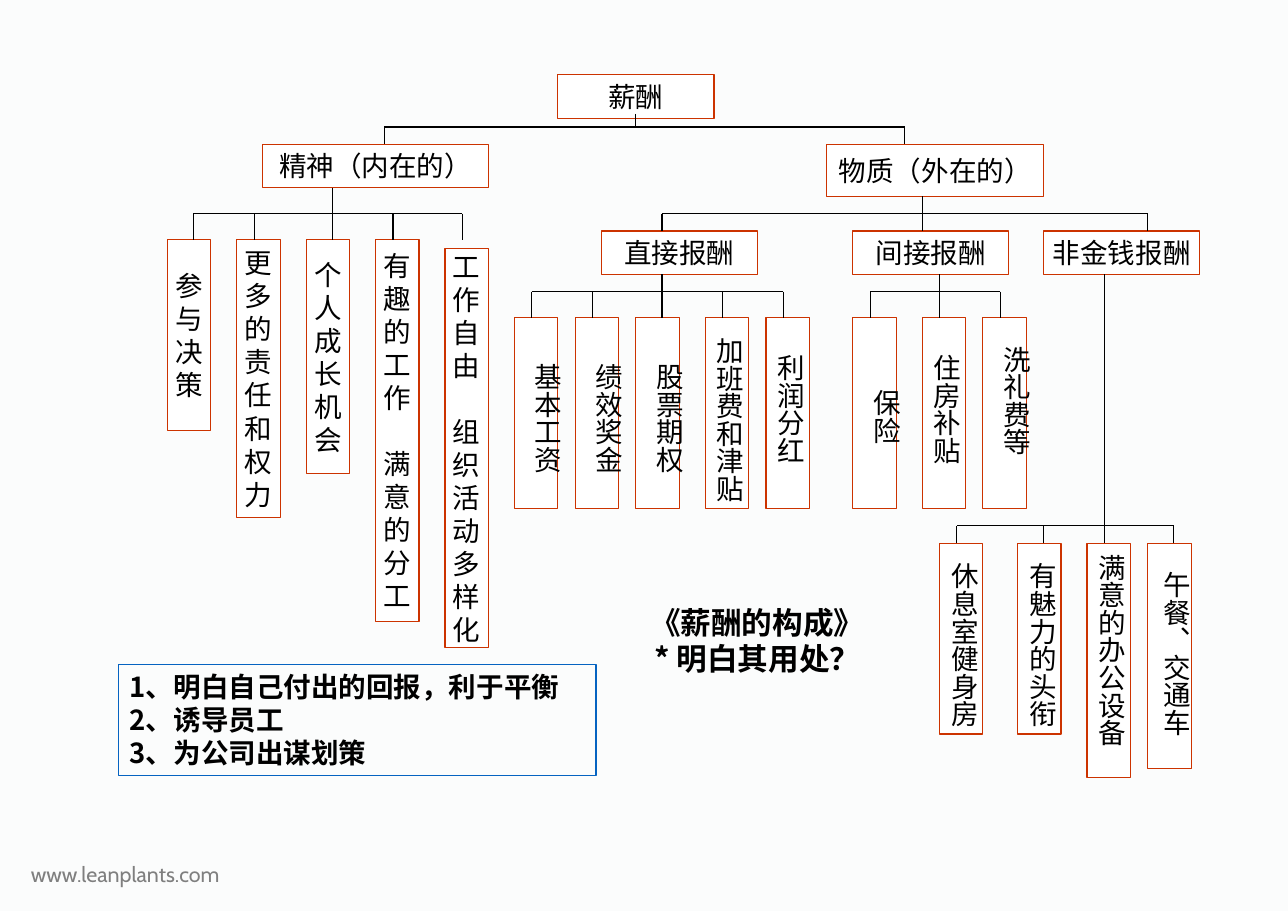
from pptx import Presentation
from pptx.dml.color import RGBColor
from pptx.enum.shapes import MSO_CONNECTOR, MSO_SHAPE
from pptx.enum.text import MSO_ANCHOR, MSO_AUTO_SIZE, PP_ALIGN
from pptx.oxml.ns import qn
from pptx.util import Inches, Mm, Pt
from lxml.etree import SubElement

# Content; places are (column, row) on a 2 mm grid
TITLE = ["《薪酬的构成》", "* 明白其用处？"]
USES = ["1、明白自己付出的回报，利于平衡", "2、诱导员工", "3、为公司出谋划策"]
SITE = "www.leanplants.com"

# Heading boxes: text, column, row, width, height
HEADINGS = [
    ("薪酬", 45, 0, 18, 5),
    ("精神（内在的）", 11, 8, 26, 5),
    ("物质（外在的）", 76, 8, 25, 6),
    ("间接报酬", 79, 18, 18, 5),
    ("直接报酬", 50, 18, 18, 5),
    ("非金钱报酬", 101, 18, 18, 5),
]

# Inner rewards, side by side: text parts, row, height
INNER_REWARDS = [
    (["参与决策"], 19, 22),
    (["更多的责任和权力"], 19, 32),
    (["个人成长机会"], 19, 27),
    (["有趣的工作", "满意的分工"], 19, 44),
    (["工作自由", "组织活动多样化"], 20, 46),
]

# Outer rewards: box column, row, height; label text, column, row
OUTER_REWARDS = [
    (40, 28, 22, "基本工资", 40, 32),
    (47, 28, 22, "绩效奖金", 47, 32),
    (54, 28, 22, "股票期权", 54, 32),
    (62, 28, 22, "加班费和津贴", 61, 29),
    (69, 28, 22, "利润分红", 68, 31),
    (79, 28, 22, "保险", 79, 35),
    (87, 28, 22, "住房补贴", 86, 31),
    (94, 28, 22, "洗礼费等", 94, 30),
    (89, 54, 22, "休息室健身房", 88, 55),
    (98, 54, 22, "有魅力的头衔", 97, 55),
    (106, 54, 27, "满意的办公设备", 105, 54),
    (113, 54, 26, "午餐、交通车", 112.5, 56),
]

# Branches: trunk column, trunk top, trunk bottom, bar row, drop columns, drop bottom
BRANCHES = [
    (54, 4.5, 6, 6, [25, 85], 8),
    (19, 13, 19, 16, [3, 10, 26, 34], 19),
    (87, 14, 18, 16, [57, 113], 18),
    (57, 23, 28, 25, [42, 49, 64, 71], 28),
    (89, 23, 28, 25, [81, 96], 28),
    (108, 23, 54, 52, [91, 101, 116], 54),
]

BACKGROUND = RGBColor(0xFB, 0xFC, 0xFC)
WHITE = RGBColor(0xFF, 0xFF, 0xFF)
BLACK = RGBColor(0, 0, 0)
GREY = RGBColor(0x7F, 0x7F, 0x7F)
RED = RGBColor(0xCC, 0x33, 0x00)
BLUE = RGBColor(0x05, 0x63, 0xC1)
CHINESE_FONT = "Noto Sans CJK SC"
LEAF_WIDTH, INNER_STEP = 5, 8
LINE_WIDTH = Pt(0.75)
LINE_HEIGHT = 1.2

prs = Presentation()
prs.slide_width, prs.slide_height = Inches(11.69), Inches(8.27)
slide = prs.slides.add_slide(prs.slide_layouts[5])
slide.background.fill.solid()
slide.background.fill.fore_color.rgb = BACKGROUND


def x_at(column):
    return Inches(1.52) + Mm(2 * column)


def y_at(row):
    return Inches(0.68) + Mm(2 * row)


def area(column, row, width, height):
    return x_at(column), y_at(row), Mm(2 * width), Mm(2 * height)


def write(shape, lines, size=18, align=PP_ALIGN.CENTER, anchor=MSO_ANCHOR.MIDDLE,
          bold=False, wrap=False, font=CHINESE_FONT, color=BLACK):
    frame = shape.text_frame
    frame.text = "\n".join(lines)
    frame.word_wrap = wrap
    frame.auto_size = MSO_AUTO_SIZE.NONE
    frame.vertical_anchor = anchor
    for paragraph in frame.paragraphs:
        paragraph.alignment = align
        if len(lines) > 1:
            paragraph.line_spacing = Pt(size * LINE_HEIGHT)
            paragraph.space_before = Pt(0)
        for run in paragraph.runs:
            run.font.size = Pt(size)
            run.font.bold = bold
            run.font.color.rgb = color
            run.font.name = font
            SubElement(run.font._element, qn("a:ea"), typeface=font)


def add_box(column, row, width, height, line=RED, fill=WHITE):
    box = slide.shapes.add_shape(MSO_SHAPE.RECTANGLE, *area(column, row, width, height))
    box.shadow.inherit = False
    if fill is None:
        box.fill.background()
    else:
        box.fill.solid()
        box.fill.fore_color.rgb = fill
    box.line.color.rgb = line
    box.line.width = LINE_WIDTH
    return box


def add_line(start, end):
    line = slide.shapes.add_connector(
        MSO_CONNECTOR.STRAIGHT, x_at(start[0]), y_at(start[1]), x_at(end[0]), y_at(end[1]))
    line.line.color.rgb = BLACK
    line.line.width = LINE_WIDTH
    SubElement(line._element.spPr, qn("a:effectLst"))


# Title
title = slide.shapes.title
title.left, title.top, title.width, title.height = area(48, 60.3, 40, 10)
write(title, TITLE, size=20, anchor=MSO_ANCHOR.TOP, bold=True, wrap=True)

# Site address
site = slide.shapes.add_textbox(*area(-17, 90, 30, 4.3))
write(site, [SITE], size=14, align=PP_ALIGN.LEFT, anchor=MSO_ANCHOR.TOP,
      wrap=True, font="Cabin", color=GREY)

# Headings
for text, *place in HEADINGS:
    write(add_box(*place), [text])

# Inner rewards, one character per line, with a gap between the parts
for index, (parts, row, height) in enumerate(INNER_REWARDS):
    reward = add_box(index * INNER_STEP, row, LEAF_WIDTH, height)
    write(reward, list("".join(parts)))
    if len(parts) > 1:
        second_part = reward.text_frame.paragraphs[len(parts[0])]
        second_part.space_before = Pt(18 * LINE_HEIGHT)

# Outer reward boxes
for column, row, height, *_ in OUTER_REWARDS:
    add_box(column, row, LEAF_WIDTH, height)

# Branch lines
for trunk, top, bottom, bar, drops, drop_bottom in BRANCHES:
    add_line((drops[0], bar), (drops[-1], bar))
    add_line((trunk, top), (trunk, bottom))
    for drop in drops:
        add_line((drop, bar), (drop, drop_bottom))

# Outer reward labels, written downwards
for *_, text, column, row in OUTER_REWARDS:
    label = slide.shapes.add_textbox(
        x_at(column), y_at(row), Inches(0.5), Inches(0.1 + 0.25 * len(text)))
    write(label, [text], align=PP_ALIGN.LEFT, anchor=MSO_ANCHOR.TOP)
    label.text_frame._txBody.bodyPr.set("vert", "eaVert")

# Uses
uses = add_box(-5.6, 68, 55, 12.8, line=BLUE, fill=None)
write(uses, USES, align=PP_ALIGN.LEFT, anchor=MSO_ANCHOR.TOP, bold=True, wrap=True)

prs.save("out.pptx")
